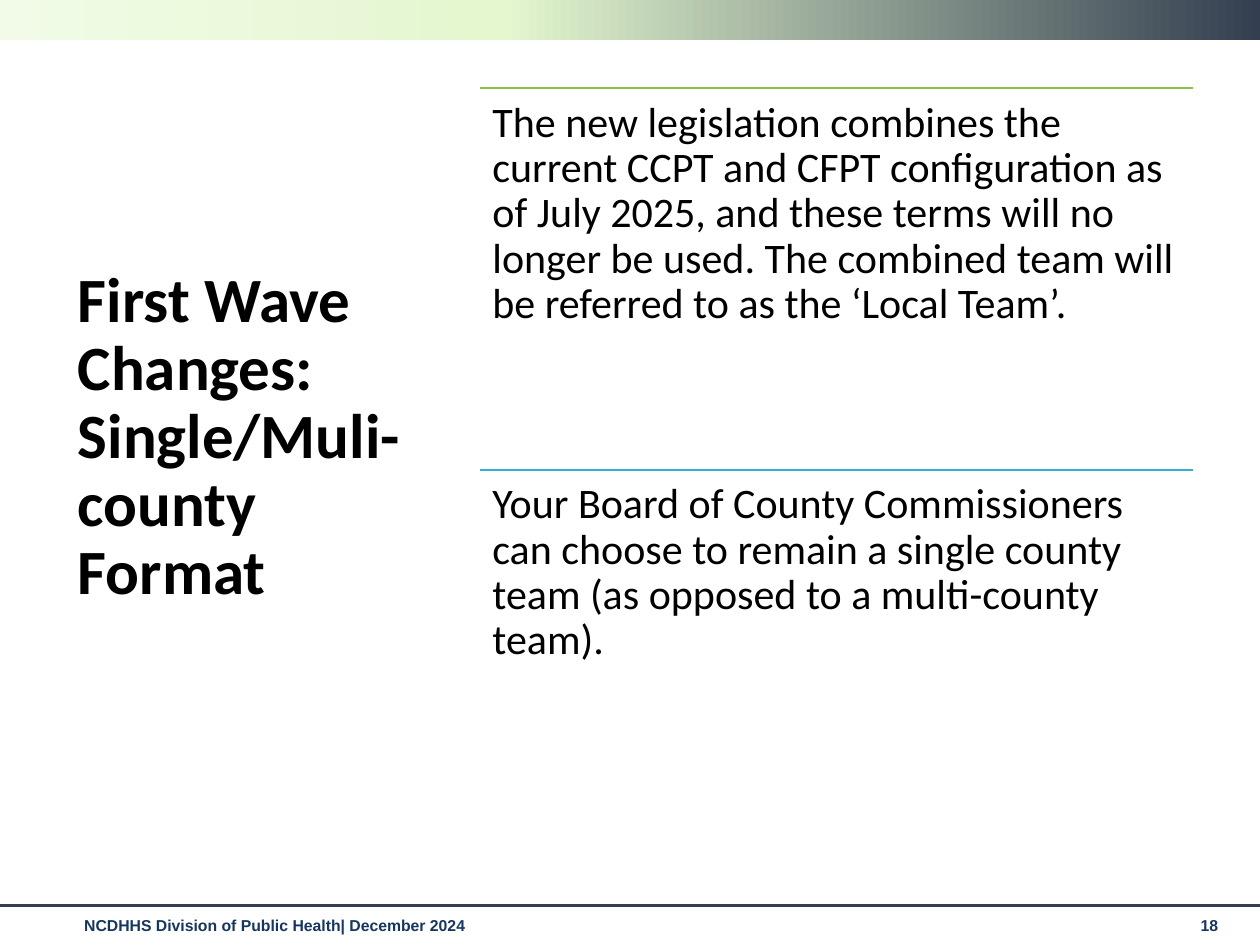
from dataclasses import dataclass

from lxml import etree
from pptx import Presentation
from pptx.dml.color import RGBColor
from pptx.enum.shapes import MSO_CONNECTOR, MSO_SHAPE
from pptx.enum.text import MSO_ANCHOR
from pptx.oxml.ns import qn
from pptx.util import Inches, Pt

TOP, MIDDLE = MSO_ANCHOR.TOP, MSO_ANCHOR.MIDDLE
STRAIGHT = MSO_CONNECTOR.STRAIGHT
RECTANGLE = MSO_SHAPE.RECTANGLE


@dataclass(frozen=True)
class Theme:
    heading_font: str = "Calibri"
    footer_font: str = "Arial"
    title_size: int = 36
    body_size: int = 24
    footer_size: int = 9
    text: str = "000000"
    footer: str = "15365E"
    slate: str = "333F50"
    green: str = "8BC145"
    blue: str = "36AFCE"
    banner: tuple = ((0, "333F50"), (60, "E4F7CF"), (100, "F1FBE7"))


class SlideBuilder:
    def __init__(self, slide, theme):
        self.slide = slide
        self.theme = theme

    def banner(self, x, y, w, h):
        sp = self.slide.shapes.add_shape(
            RECTANGLE, Inches(x), Inches(y), Inches(w), Inches(h))
        sp.shadow.inherit = False
        sp.line.fill.background()
        sp.fill.gradient()
        sp.fill.gradient_angle = 180
        stops = next(sp._element.spPr.iter(qn("a:gsLst")))
        for stop in list(stops):
            stops.remove(stop)
        for percent, color in self.theme.banner:
            stop = etree.SubElement(stops, qn("a:gs"), pos=str(percent * 1000))
            etree.SubElement(stop, qn("a:srgbClr"), val=color)

    def rule(self, x, y, w, color, weight):
        """Draw a horizontal line."""
        line = self.slide.shapes.add_connector(
            STRAIGHT, Inches(x), Inches(y), Inches(x + w), Inches(y))
        line.line.color.rgb = RGBColor.from_string(color)
        line.line.width = Pt(weight)
        etree.SubElement(line._element.spPr, qn("a:effectLst"))

    def text(self, text, x, y, w, h, font, size, color, bold=False,
             spacing=None, anchor=TOP, inset_top=0.05, inset_bottom=0.05):
        box = self.slide.shapes.add_textbox(
            Inches(x), Inches(y), Inches(w), Inches(h))
        tf = box.text_frame
        tf.word_wrap = True
        tf.vertical_anchor = anchor
        tf.margin_top = Inches(inset_top)
        tf.margin_bottom = Inches(inset_bottom)
        p = tf.paragraphs[0]
        p.text = text
        p.line_spacing = spacing
        p.font.name = font
        p.font.size = Pt(size)
        p.font.bold = bold
        p.font.color.rgb = RGBColor.from_string(color)

    def title(self, text, x, y, w, h):
        t = self.theme
        self.text(text, x, y, w, h, t.heading_font, t.title_size, t.text,
                  bold=True, spacing=0.9, anchor=MIDDLE, inset_bottom=0.6)

    def ruled_section(self, text, color, x, y, w, h):
        t = self.theme
        self.rule(x, y, w, color, 1)
        self.text(text, x, y, w, h, t.heading_font, t.body_size, t.text,
                  spacing=0.9, inset_top=0.1, inset_bottom=0.1)

    def footer(self, text, x, w):
        t = self.theme
        self.text(text, x, 7.22, w, 0.3, t.footer_font, t.footer_size,
                  t.footer, bold=True)


def main():
    prs = Presentation()
    prs.slide_width, prs.slide_height = Inches(10), Inches(7.5)
    theme = Theme()
    s = SlideBuilder(prs.slides.add_slide(prs.slide_layouts[6]), theme)

    s.footer("NCDHHS Division of Public Health| December 2024", 0.57, 8.74)
    s.footer("18", 9.43, 0.44)
    s.banner(0, 0, 10, 0.32)
    s.rule(0, 7.19, 10, theme.slate, 1.75)

    s.title("First Wave Changes: Single/Muli-county Format", 0.52, 0.7, 2.8, 6.11)

    sections = [
        ("The new legislation combines the current CCPT and CFPT configuration "
         "as of July 2025, and these terms will no longer be used. The combined "
         "team will be referred to as the ‘Local Team’.", theme.green),
        ("Your Board of County Commissioners can choose to remain a single "
         "county team (as opposed to a multi-county team).", theme.blue),
    ]
    section_height = 3.03
    for i, (text, color) in enumerate(sections):
        s.ruled_section(text, color, 3.81, 0.7 + i * section_height,
                        5.66, section_height)

    prs.save("out.pptx")


if __name__ == "__main__":
    main()
